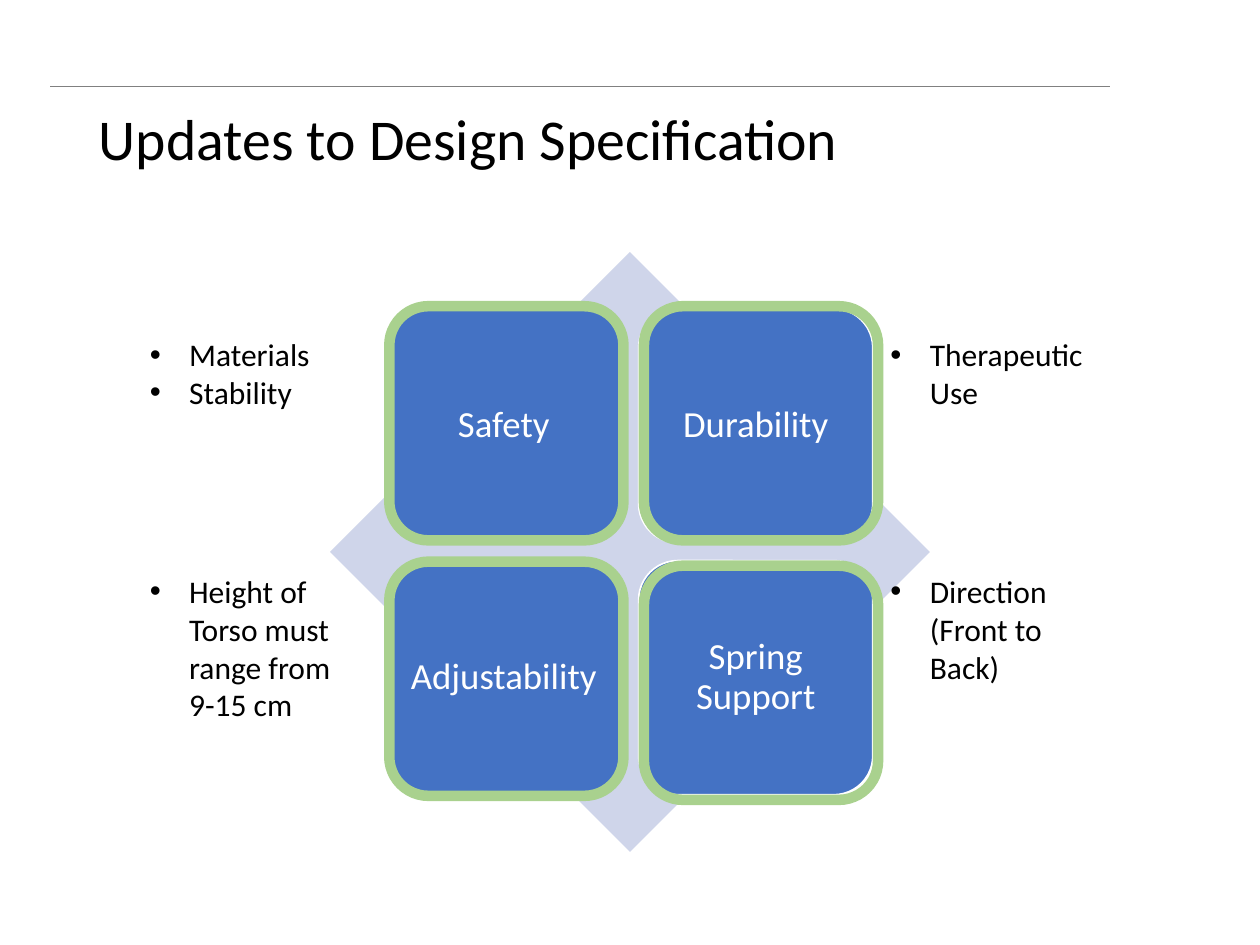
from lxml import etree
from pptx import Presentation
from pptx.dml.color import RGBColor
from pptx.enum import shapes, text
from pptx.oxml import ns
from pptx.util import Pt

TITLE = "Updates to Design Specification"
TILES = ["Safety", "Durability", "Adjustability", "Spring Support"]
RINGS = [(222.5, 175), (368, 175), (222.5, 321), (368, 323.3)]
NOTES = [
    (78.5, 188, 135.4, 51, ["Materials", "Stability"]),
    (501.8, 323.3, 108, 72.7, ["Direction (Front to Back)"]),
    (78.5, 323.3, 135.4, 94.3, ["Height of Torso must range from 9-15 cm"]),
    (501.8, 188, 141.8, 51, ["Therapeutic Use"]),
]
TILE_LEFT, TILE_TOP, TILE_SIZE, TILE_PITCH = 221, 176.4, 133.8, 144
INDENT = 22.5


def color(value):
    return RGBColor.from_string(value)


def apply(target, **values):
    for name, value in values.items():
        setattr(target, name, value)


def add_block(kind, left, top, size, fill=None, line=None, width=1):
    shape = slide.shapes.add_shape(kind, Pt(left), Pt(top), Pt(size), Pt(size))
    shape.shadow.inherit = False
    for part, value in ((shape.fill, fill), (shape.line.fill, line)):
        if value:
            part.solid()
            part.fore_color.rgb = color(value)
        else:
            part.background()
    if line:
        shape.line.width = Pt(width)
    return shape


def add_bullet(paragraph):
    properties = paragraph._p.get_or_add_pPr()
    properties.set("marL", str(Pt(INDENT)))
    properties.set("indent", str(-Pt(INDENT)))
    etree.SubElement(properties, ns.qn("a:buFont")).set("typeface", "Arial")
    etree.SubElement(properties, ns.qn("a:buChar")).set("char", "•")


def write(frame, lines, size, font_color="000000", bullet=False, **format_values):
    frame.word_wrap = True
    for index, line in enumerate(lines):
        paragraph = frame.add_paragraph() if index else frame.paragraphs[0]
        paragraph.text = line
        if bullet:
            add_bullet(paragraph)
        apply(paragraph, **format_values)
        apply(paragraph.font, name="Calibri", size=Pt(size))
        paragraph.font.color.rgb = color(font_color)


def add_text(left, top, width, height):
    return slide.shapes.add_textbox(Pt(left), Pt(top), Pt(width), Pt(height)).text_frame


presentation = Presentation()
apply(presentation, slide_width=Pt(720), slide_height=Pt(540))
slide = presentation.slides.add_slide(presentation.slide_layouts[6])

rule = slide.shapes.add_connector(
    shapes.MSO_CONNECTOR.STRAIGHT, Pt(28.8), Pt(49.5), Pt(634.5), Pt(49.5))
rule.line.color.rgb = color("808080")
rule.line.width = Pt(0.25)
etree.SubElement(rule._element.spPr, ns.qn("a:effectLst"))

title = add_text(49.5, 28.8, 621, 104.4)
title.vertical_anchor = text.MSO_ANCHOR.MIDDLE
write(title, [TITLE], 33, line_spacing=0.9)

add_block(shapes.MSO_SHAPE.DIAMOND, 188.6, 144, 342.8, "CFD5EA")

for index, label in enumerate(TILES):
    row, column = divmod(index, 2)
    tile = add_block(
        shapes.MSO_SHAPE.ROUNDED_RECTANGLE,
        TILE_LEFT + column * TILE_PITCH, TILE_TOP + row * TILE_PITCH,
        TILE_SIZE, "4472C4", "FFFFFF")
    margins = dict.fromkeys(
        ("margin_left", "margin_top", "margin_right", "margin_bottom"), Pt(6.3))
    apply(tile.text_frame, vertical_anchor=text.MSO_ANCHOR.MIDDLE, **margins)
    write(tile.text_frame, [label], 21, "FFFFFF",
          alignment=text.PP_ALIGN.CENTER, line_spacing=0.9)

for left, top, width, height, lines in NOTES:
    write(add_text(left, top, width, height), lines, 18, bullet=True)

for left, top in RINGS:
    add_block(shapes.MSO_SHAPE.ROUNDED_RECTANGLE, left, top, TILE_SIZE,
              line="A9D18E", width=6)

presentation.save("out.pptx")
